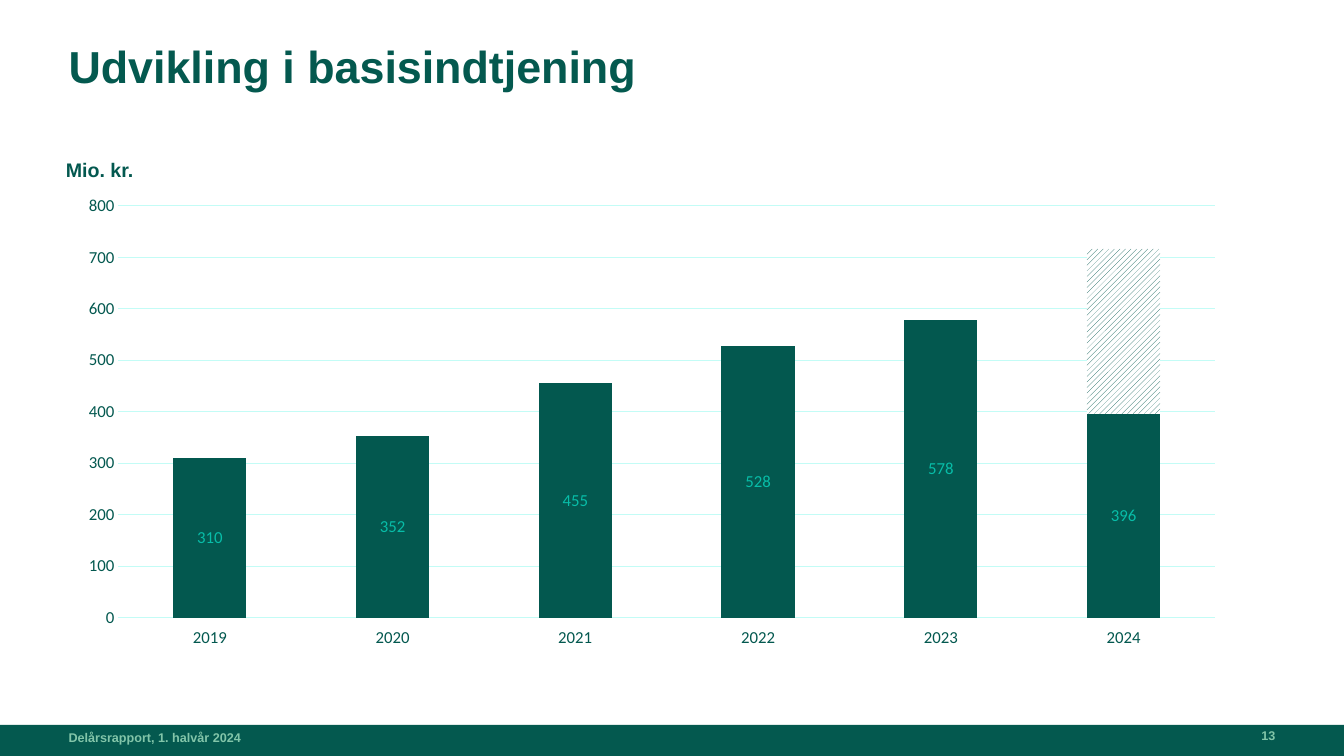
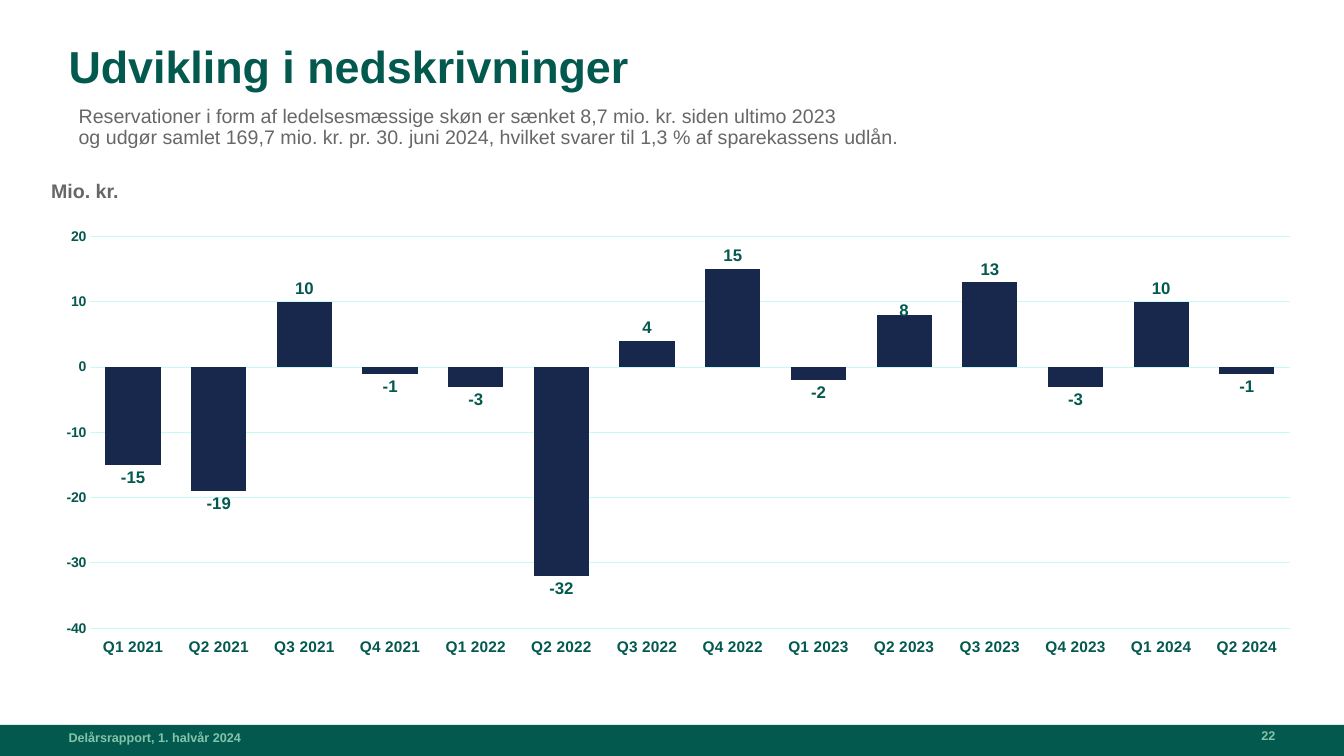
from lxml import etree
from pptx import Presentation
from pptx.chart.data import CategoryChartData
from pptx.dml.color import RGBColor
from pptx.enum.chart import XL_CHART_TYPE, XL_LABEL_POSITION, XL_TICK_LABEL_POSITION, XL_TICK_MARK
from pptx.enum.dml import MSO_PATTERN
from pptx.enum.shapes import MSO_SHAPE
from pptx.enum.text import MSO_ANCHOR, MSO_AUTO_SIZE, PP_ALIGN
from pptx.oxml.ns import qn
from pptx.util import Inches, Pt

STACKED, CLUSTERED = XL_CHART_TYPE.COLUMN_STACKED, XL_CHART_TYPE.COLUMN_CLUSTERED
CENTER, OUTSIDE = XL_LABEL_POSITION.CENTER, XL_LABEL_POSITION.OUTSIDE_END
LOW, NO_TICK = XL_TICK_LABEL_POSITION.LOW, XL_TICK_MARK.NONE
DIAGONAL = MSO_PATTERN.WIDE_UPWARD_DIAGONAL
RECTANGLE = MSO_SHAPE.RECTANGLE
TOP, BOTTOM = MSO_ANCHOR.TOP, MSO_ANCHOR.BOTTOM
LEFT, RIGHT = PP_ALIGN.LEFT, PP_ALIGN.RIGHT
FIXED_SIZE = MSO_AUTO_SIZE.NONE
TITLE_ONLY = 5

COLORS = {
    "green": "04594F",
    "pine": "03584F",
    "mint": "82C5A9",
    "turquoise": "08BDA8",
    "grid": "C3FCF6",
    "navy": "18284D",
    "grey": "676767",
    "white": "FFFFFF",
}
FOOTER = "Delårsrapport, 1. halvår 2024"
MARGIN = 5.1


def color(name):
    return RGBColor.from_string(COLORS[name])


def style_font(font, size, color_name, bold=False, name="Arial"):
    font.name, font.size, font.bold = name, Pt(size), bold
    font.color.rgb = color(color_name)


def manual_layout(**settings):
    layout = etree.Element(qn("c:layout"))
    manual = etree.SubElement(layout, qn("c:manualLayout"))
    for tag, value in settings.items():
        etree.SubElement(manual, qn(f"c:{tag}")).set("val", str(value))
    return layout


class Deck:
    def __init__(self):
        self.presentation = Presentation()
        self.presentation.slide_width = Inches(13.33)
        self.presentation.slide_height = Inches(7.5)
        self.slide = None

    def area(self, left, top, width, height):
        across = self.presentation.slide_width / 100
        down = self.presentation.slide_height / 100
        return [round(length) for length in (left * across, top * down, width * across, height * down)]

    def fill_text(self, shape, text, size, color_name, bold=True, anchor=TOP, align=LEFT, spacing=None, wrap=True):
        frame = shape.text_frame
        frame.text = text
        frame.auto_size = FIXED_SIZE
        frame.word_wrap = wrap
        frame.vertical_anchor = anchor
        frame.margin_left = frame.margin_top = frame.margin_right = frame.margin_bottom = 0
        for paragraph in frame.paragraphs:
            paragraph.alignment = align
            paragraph.line_spacing = spacing
            for run in paragraph.runs:
                style_font(run.font, size, color_name, bold)

    def text(self, area, text, size, color_name, **options):
        self.fill_text(self.slide.shapes.add_textbox(*self.area(*area)), text, size, color_name, **options)

    def new_slide(self, title, number):
        self.slide = self.presentation.slides.add_slide(self.presentation.slide_layouts[TITLE_ONLY])
        band = self.slide.shapes.add_shape(RECTANGLE, *self.area(0, 95.87, 100, 4.13))
        band.shadow.inherit = False
        band.fill.solid()
        band.fill.fore_color.rgb = color("green")
        band.line.fill.background()
        heading = self.slide.shapes.title
        heading.left, heading.top, heading.width, heading.height = self.area(MARGIN, 5.87, 89.8, 9.07)
        self.fill_text(heading, title, 32, "green", spacing=0.9)
        self.text((MARGIN, 94.8, 36.9, 3.73), FOOTER, 9, "mint", anchor=BOTTOM)
        self.text((85.5, 94.53, 9.4, 3.73), str(number), 9, "mint", anchor=BOTTOM, align=RIGHT)

    def unit(self, left, top, color_name):
        self.text((left, top, 5.1, 3.2), "Mio. kr.", 14, color_name, anchor=BOTTOM, wrap=False)

    def columns(self, area, kind, categories, series, plot_area, gap, overlap, scale, font_name):
        data = CategoryChartData()
        data.categories = categories
        for name, values in series.items():
            data.add_series(name, values)
        chart = self.slide.shapes.add_chart(kind, *self.area(*area), data).chart
        chart.has_title = chart.has_legend = False
        style_font(chart.font, 10, "green", name=font_name)
        plot = chart.plots[0]
        plot.gap_width, plot.overlap, plot.vary_by_categories = gap, overlap, False
        plot_element = chart._chartSpace.find(".//" + qn("c:plotArea"))
        for layout in plot_element.findall(qn("c:layout")):
            plot_element.remove(layout)
        x, y, w, h = plot_area
        plot_element.insert(0, manual_layout(
            layoutTarget="inner", xMode="edge", yMode="edge", x=x, y=y, w=w, h=h))
        axis = chart.value_axis
        axis.minimum_scale, axis.maximum_scale, axis.major_unit = scale
        axis.has_major_gridlines = True
        axis.format.line.fill.background()
        for line in (axis.major_gridlines.format.line, chart.category_axis.format.line):
            line.color.rgb = color("grid")
            line.width = Pt(0.75)
        chart.category_axis.tick_label_position = LOW
        for axis in (chart.category_axis, chart.value_axis):
            axis.major_tick_mark = axis.minor_tick_mark = NO_TICK
        return chart

    def axis_fonts(self, chart, category_size, value_size, color_name, **options):
        style_font(chart.category_axis.tick_labels.font, category_size, color_name, **options)
        style_font(chart.value_axis.tick_labels.font, value_size, color_name, **options)

    def solid_series(self, series, fill, position, label_color, **options):
        series.invert_if_negative = False
        series.format.fill.solid()
        series.format.fill.fore_color.rgb = color(fill)
        labels = series.data_labels
        labels.show_value = True
        labels.position = position
        style_font(labels.font, 12, label_color, **options)

    def hatched_series(self, series, line_color):
        series.invert_if_negative = False
        fill = series.format.fill
        fill.patterned()
        fill.pattern = DIAGONAL
        fill.fore_color.rgb = color(line_color)
        fill.back_color.rgb = color("white")

    def lower_label(self, series, index, share, color_name):
        label = series.points[index].data_label
        label.position = OUTSIDE
        style_font(label.font, 12, color_name, bold=True)
        element = series.data_labels._element.find(qn("c:dLbl"))
        element.insert(1, manual_layout(x=0, y=share))


def earnings_slide(deck):
    deck.new_slide("Udvikling i basisindtjening", 13)
    deck.unit(4.9, 20.8, "pine")
    chart = deck.columns(
        (MARGIN, 25.2, 88.3, 63.2), STACKED,
        [str(year) for year in range(2019, 2025)],
        {"Series 1": (310, 352, 455, 528, 578, 396),
         "Series 2": (None, None, None, 0, None, 320)},
        plot_area=(0.042, 0.032, 0.924, 0.862),
        gap=150, overlap=100, scale=(0, 800, 100), font_name="Calibri")
    deck.axis_fonts(chart, 12, 12, "pine", name="Calibri")
    realised, expected = chart.plots[0].series
    deck.solid_series(realised, "pine", CENTER, "turquoise", name="Calibri")
    deck.hatched_series(expected, "pine")


def impairments_slide(deck):
    deck.new_slide("Udvikling i nedskrivninger", 22)
    deck.text(
        (5.85, 14.13, 66.4, 6.5),
        "Reservationer i form af ledelsesmæssige skøn er sænket 8,7 mio. kr. siden ultimo 2023\v"
        "og udgør samlet 169,7 mio. kr. pr. 30. juni 2024, hvilket svarer til 1,3 % af sparekassens udlån.",
        14, "grey", bold=False, spacing=0.9)
    quarters = [f"Q{quarter} {year}" for year in range(2021, 2025) for quarter in range(1, 5)]
    chart = deck.columns(
        (0, 28.4, 96, 60), CLUSTERED, quarters[:14],
        {"Series 1": (-15, -19, 10, -1, -3, -32, 4, 15, -2, 8, 13, -3, 10, -1)},
        plot_area=(0.07, 0.048, 0.93, 0.864),
        gap=55, overlap=-27, scale=(-40, 20, 10), font_name="Arial")
    deck.axis_fonts(chart, 11, 10, "green", bold=True)
    impairments = chart.plots[0].series[0]
    deck.solid_series(impairments, "navy", OUTSIDE, "green", bold=True)
    deck.lower_label(impairments, quarters.index("Q2 2023"), 0.02, "green")
    deck.unit(3.8, 23.6, "grey")


def main():
    deck = Deck()
    earnings_slide(deck)
    impairments_slide(deck)
    deck.presentation.save("out.pptx")


if __name__ == "__main__":
    main()
